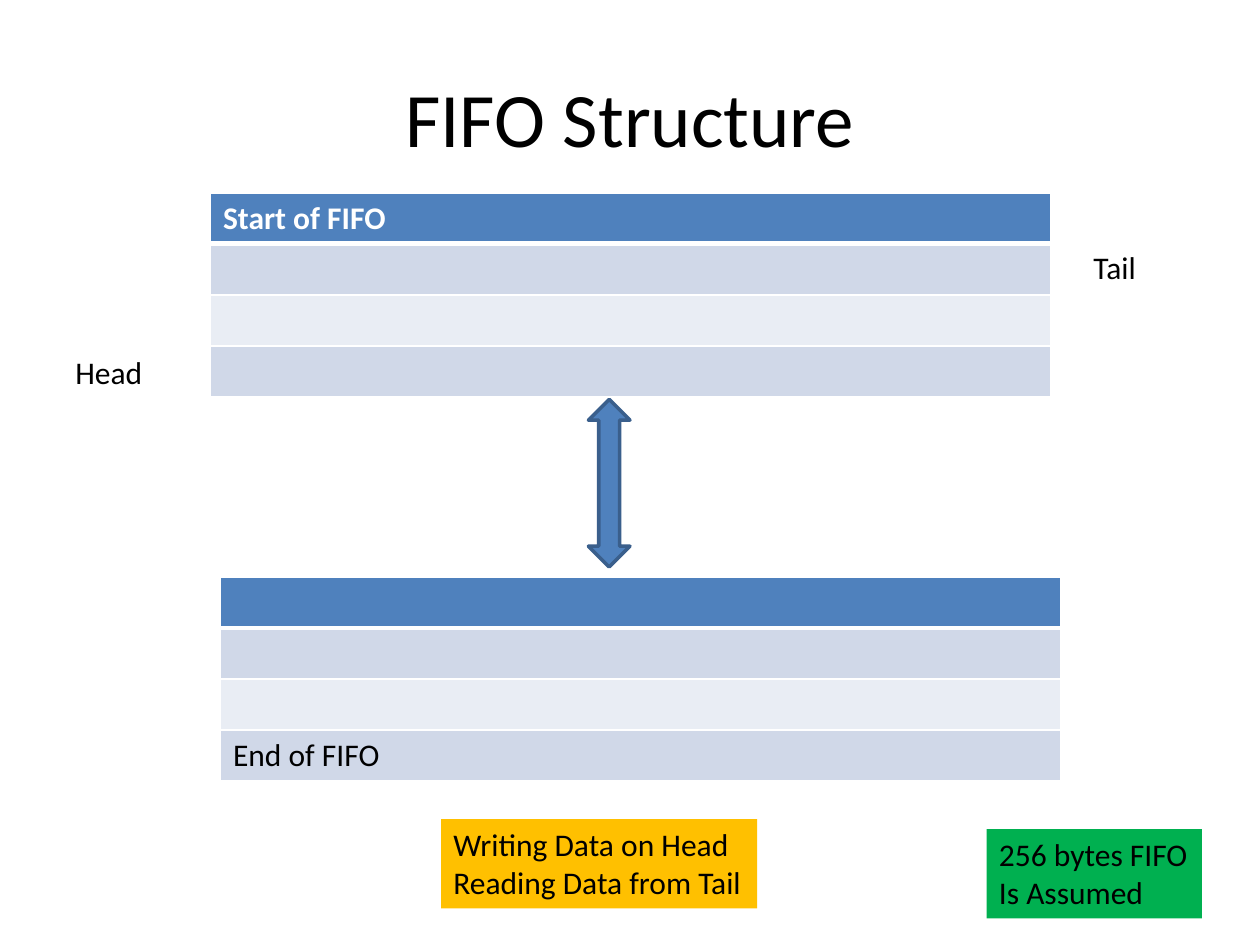
from lxml import etree
from pptx import Presentation
from pptx.dml.color import RGBColor
from pptx.enum.shapes import MSO_SHAPE
from pptx.enum.text import MSO_ANCHOR, PP_ALIGN
from pptx.oxml.ns import qn
from pptx.util import Inches, Pt

CENTER, LEFT = PP_ALIGN.CENTER, PP_ALIGN.LEFT
MIDDLE, TOP = MSO_ANCHOR.MIDDLE, MSO_ANCHOR.TOP
UP_DOWN_ARROW = MSO_SHAPE.UP_DOWN_ARROW

COLORS = {
    "black": "000000",
    "white": "FFFFFF",
    "blue": "4F81BD",
    "outline": "3A5F8C",
    "dark band": "D0D8E8",
    "light band": "E9EDF4",
    "amber": "FFC000",
    "green": "00B050",
}


def color(name):
    return RGBColor.from_string(COLORS[name])


def write_lines(frame, lines, size=18, ink="black", bold=False, align=LEFT):
    for index, line in enumerate(lines):
        para = frame.paragraphs[0] if index == 0 else frame.add_paragraph()
        para.alignment = align
        span = para.add_run()
        span.text = line
        span.font.name = "Calibri"
        span.font.size = Pt(size)
        span.font.bold = bold
        span.font.color.rgb = color(ink)


deck = Presentation()
deck.slide_width, deck.slide_height = Inches(10), Inches(7.5)
page = deck.slides.add_slide(deck.slide_layouts[6])

title = page.shapes.add_textbox(Inches(0.5), Inches(0.3), Inches(9), Inches(1.25))
title.text_frame.word_wrap = True
title.text_frame.vertical_anchor = MIDDLE
write_lines(title.text_frame, ["FIFO Structure"], size=44, align=CENTER)

# The two ends of the FIFO: left, top, and the text of each row
row_fills = ["blue", "dark band", "light band", "dark band"]
fifo_ends = [
    (1.67, 1.53, ["Start of FIFO", "", "", ""]),
    (1.75, 4.58, ["", "", "", "End of FIFO"]),
]
for left, top, texts in fifo_ends:
    table = page.shapes.add_table(
        len(texts), 1, Inches(left), Inches(top), Inches(6.67), Inches(1.62)
    ).table
    for row, (text, fill) in enumerate(zip(texts, row_fills)):
        cell = table.cell(row, 0)
        properties = cell._tc.get_or_add_tcPr()
        thick_side = {0: "B", 1: "T"}.get(row)
        for side in "LRTB":
            width = Pt(3 if side == thick_side else 1)
            border = etree.SubElement(properties, qn(f"a:ln{side}"), w=str(width))
            paint = etree.SubElement(border, qn("a:solidFill"))
            etree.SubElement(paint, qn("a:srgbClr"), val=COLORS["white"])
        cell.fill.solid()
        cell.fill.fore_color.rgb = color(fill)
        if text:
            header = row == 0
            write_lines(cell.text_frame, [text], ink="white" if header else "black", bold=header)

arrow = page.shapes.add_shape(
    UP_DOWN_ARROW, Inches(4.67), Inches(3.17), Inches(0.33), Inches(1.33)
)
arrow.shadow.inherit = False
arrow.fill.solid()
arrow.fill.fore_color.rgb = color("blue")
arrow.line.color.rgb = color("outline")
arrow.line.width = Pt(2)

# Pointer labels and coloured notes: left, top, width, height, fill, lines
labels = [
    (0.5, 2.75, 0.74, 0.4, None, ["Head"]),
    (8.58, 1.92, 0.54, 0.4, None, ["Tail"]),
    (3.5, 6.5, 2.51, 0.71, "amber", ["Writing Data on Head", "Reading Data from Tail"]),
    (7.83, 6.58, 1.71, 0.71, "green", ["256 bytes FIFO", "Is Assumed"]),
]
for left, top, width, height, fill, lines in labels:
    box = page.shapes.add_textbox(Inches(left), Inches(top), Inches(width), Inches(height))
    box.text_frame.word_wrap = False
    box.text_frame.vertical_anchor = TOP
    if fill:
        box.fill.solid()
        box.fill.fore_color.rgb = color(fill)
    write_lines(box.text_frame, lines)

deck.save("out.pptx")
